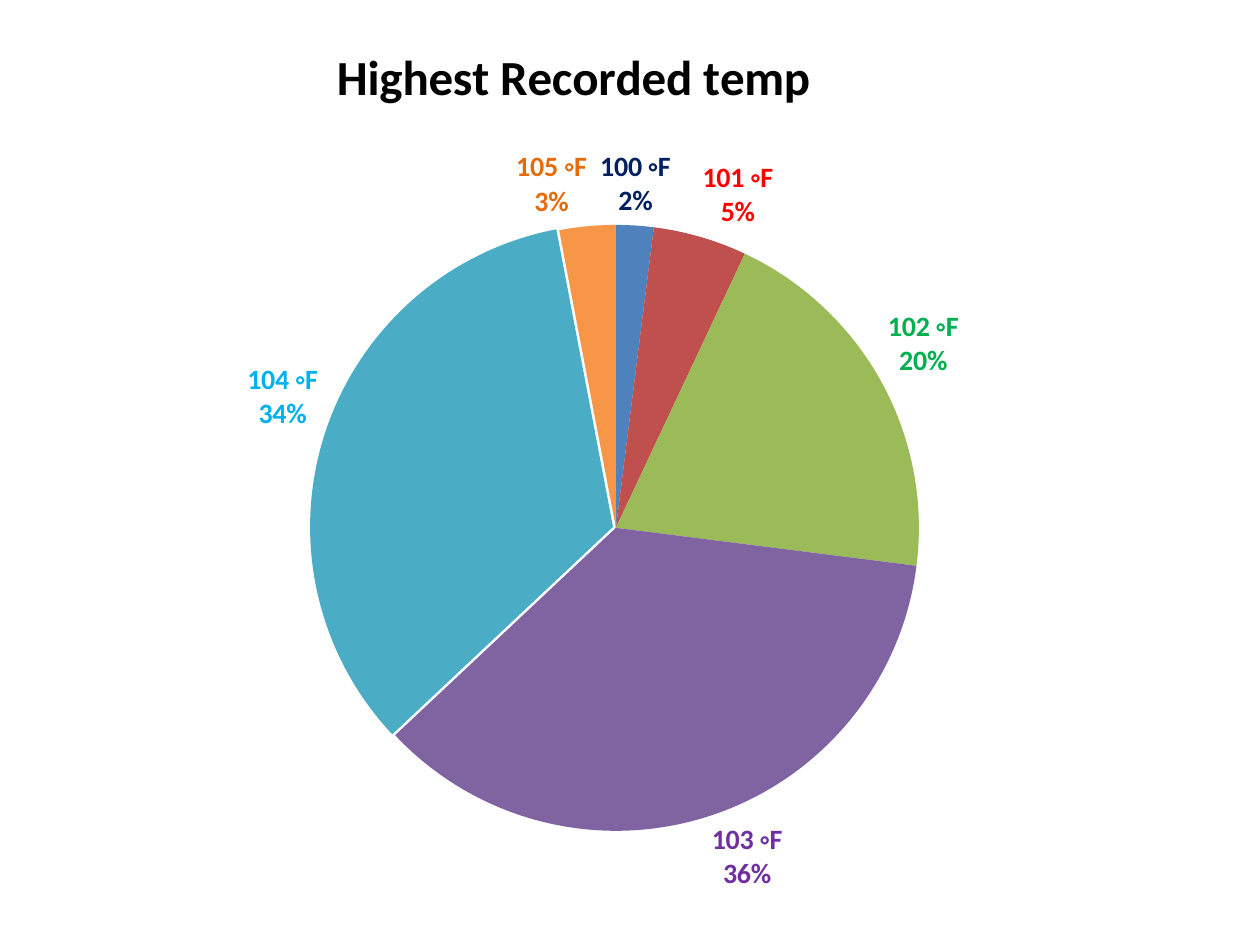
"""Build a slide with a pie chart of the highest recorded temperatures."""
from dataclasses import dataclass

from lxml import etree
from pptx import Presentation
from pptx.chart.data import CategoryChartData
from pptx.dml.color import RGBColor
from pptx.enum.chart import XL_CHART_TYPE, XL_LABEL_POSITION
from pptx.oxml.ns import qn
from pptx.util import Emu, Pt

PIE = XL_CHART_TYPE.PIE
OUTSIDE_END = XL_LABEL_POSITION.OUTSIDE_END
EMU_PER_PX = 914400 / 126
FONT = "Calibri"
COLORS = {
    "black": "000000",
    "blue": "4F81BD", "navy": "002060",
    "brick": "C0504D", "red": "FF0000",
    "olive": "9BBB59", "green": "00B050",
    "plum": "8064A2", "violet": "7030A0",
    "teal": "4BACC6", "sky": "00B0F0",
    "apricot": "F79646", "orange": "E46C0A",
}


@dataclass(frozen=True)
class Box:
    left: int
    top: int
    width: int = 0
    height: int = 0


@dataclass(frozen=True)
class Reading:
    temperature: str
    percent: int
    slice_color: str
    label_color: str
    explosion: int = 0


CHART_BOX = Box(42, 21, 1131, 892)
PIE_BOX = Box(313, 225, 606, 606)
TITLE_BOX = Box(328, 35)
READINGS = [
    Reading("100 ◦F", 2, "blue", "navy"),
    Reading("101 ◦F", 5, "brick", "red"),
    Reading("102 ◦F", 20, "olive", "green"),
    Reading("103 ◦F", 36, "plum", "violet"),
    Reading("104 ◦F", 34, "teal", "sky", explosion=1),
    Reading("105 ◦F", 3, "apricot", "orange"),
]


def px(length: int) -> Emu:
    return Emu(round(length * EMU_PER_PX))


def rgb(name: str) -> RGBColor:
    return RGBColor.from_string(COLORS[name])


def format_font(font, *, size: int, color: str, bold: bool = False) -> None:
    font.name = FONT
    font.size = Pt(size)
    font.bold = bold
    font.color.rgb = rgb(color)


def write_text(frame, text: str, **style) -> None:
    frame.text = text
    format_font(frame.paragraphs[0].runs[0].font, **style)


def place(parent, box: Box, inner: bool = False) -> None:
    """Give a chart part a manual layout as fractions of the chart."""
    for old in parent.findall(qn("c:layout")):
        parent.remove(old)
    layout = etree.Element(qn("c:layout"))
    manual = etree.SubElement(layout, qn("c:manualLayout"))
    entries = {"layoutTarget": "inner"} if inner else {}
    entries |= {"xMode": "edge", "yMode": "edge"}
    entries["x"] = (box.left - CHART_BOX.left) / CHART_BOX.width
    entries["y"] = (box.top - CHART_BOX.top) / CHART_BOX.height
    if box.width:
        entries["w"] = box.width / CHART_BOX.width
        entries["h"] = box.height / CHART_BOX.height
    for tag, value in entries.items():
        etree.SubElement(manual, qn(f"c:{tag}")).set("val", str(value))
    title_text = parent.find(qn("c:tx"))
    parent.insert(0 if title_text is None else 1, layout)


def style_slice(point, reading: Reading) -> None:
    point.format.fill.solid()
    point.format.fill.fore_color.rgb = rgb(reading.slice_color)
    point.format.line.fill.background()
    label = point.data_label
    format_font(label.font, size=16, color=reading.label_color, bold=True)
    label.position = OUTSIDE_END


def show_category_and_percent(chart) -> None:
    shown = {"showVal": "0", "showCatName": "1", "showPercent": "1"}
    for label in chart.element.xpath(".//c:dLbl | .//c:ser/c:dLbls"):
        for tag, value in shown.items():
            label.find(qn(f"c:{tag}")).set("val", value)
        separator = etree.Element(qn("c:separator"))
        separator.text = "\n"
        last_flag = label.find(qn("c:showBubbleSize"))
        if last_flag is None:
            last_flag = label.find(qn("c:showPercent"))
        last_flag.addnext(separator)


def explode_slices(chart) -> None:
    for point, reading in zip(chart.element.xpath(".//c:dPt"), READINGS):
        if reading.explosion:
            explosion = etree.Element(qn("c:explosion"))
            explosion.set("val", str(reading.explosion))
            point.find(qn("c:spPr")).addprevious(explosion)


def add_temperature_chart(slide) -> None:
    data = CategoryChartData()
    data.categories = [reading.temperature for reading in READINGS]
    data.add_series("Series 1", [reading.percent for reading in READINGS])
    chart = slide.shapes.add_chart(
        PIE, px(CHART_BOX.left), px(CHART_BOX.top),
        px(CHART_BOX.width), px(CHART_BOX.height), data).chart
    format_font(chart.font, size=10, color="black")
    chart.has_legend = False
    write_text(chart.chart_title.text_frame, "Highest Recorded temp",
               size=28, color="black", bold=True)
    place(chart.element.xpath("./c:chart/c:title")[0], TITLE_BOX)
    place(chart.element.xpath("./c:chart/c:plotArea")[0], PIE_BOX, inner=True)

    chart.plots[0].vary_by_categories = True
    temperatures = chart.plots[0].series[0]
    labels = temperatures.data_labels
    format_font(labels.font, size=16, color="blue", bold=True)
    labels.position = OUTSIDE_END
    for index, reading in enumerate(READINGS):
        style_slice(temperatures.points[index], reading)
    show_category_and_percent(chart)
    explode_slices(chart)


def main() -> None:
    deck = Presentation()
    deck.slide_width, deck.slide_height = px(1260), px(945)
    add_temperature_chart(deck.slides.add_slide(deck.slide_layouts[6]))
    deck.save("out.pptx")


if __name__ == "__main__":
    main()
